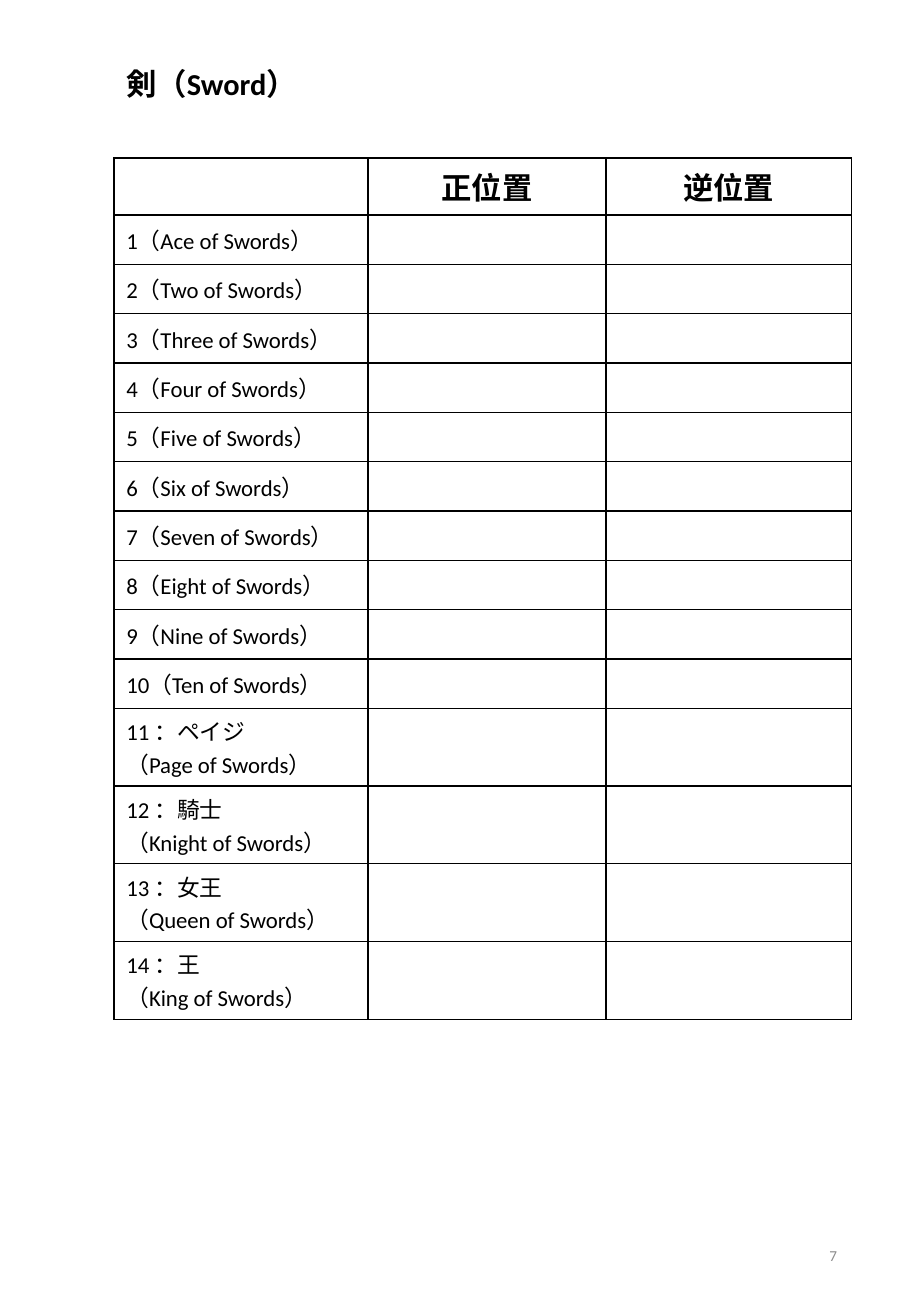
from lxml import etree
from pptx import Presentation
from pptx.dml.color import RGBColor
from pptx.enum import text
from pptx.oxml import ns
from pptx.util import Inches, Pt

COLORS = {"ink": "000000", "paper": "FFFFFF", "page_number": "8C8C8C"}
FORMATS = {
    "heading": {"size": Pt(18), "bold": True},
    "card": {"size": Pt(13.5), "bold": False},
    "page_number": {"size": Pt(9), "bold": False},
}
RANKS = ["Ace", "Two", "Three", "Four", "Five", "Six", "Seven", "Eight", "Nine", "Ten"]
COURT = [("ペイジ", "Page"), ("騎士", "Knight"), ("女王", "Queen"), ("王", "King")]


class SuitSheet:
    font_name = "Calibri"

    def __init__(self, deck):
        self.page = deck.slides.add_slide(deck.slide_layouts[6])

    def set_lines(self, frame, lines, style, align=text.PP_ALIGN.LEFT, color="ink"):
        """Fill a text frame with one paragraph per line."""
        for index, line in enumerate(lines):
            para = frame.add_paragraph() if index else frame.paragraphs[0]
            para.alignment = align
            span = para.add_run()
            span.text = line
            span.font.name = self.font_name
            span.font.color.rgb = RGBColor.from_string(COLORS[color])
            for name, value in FORMATS[style].items():
                setattr(span.font, name, value)

    def text_box(self, place, line, style, anchor=text.MSO_ANCHOR.TOP, **look):
        box = self.page.shapes.add_textbox(*map(Inches, place))
        box.text_frame.word_wrap = True
        box.text_frame.vertical_anchor = anchor
        self.set_lines(box.text_frame, [line], style, **look)

    def border(self, cell):
        """Draw a thin line on all four sides of a cell."""
        properties = cell._tc.get_or_add_tcPr()
        for index, side in enumerate(("lnL", "lnR", "lnT", "lnB")):
            line = etree.Element(ns.qn(f"a:{side}"), w=str(Pt(1)))
            fill = etree.SubElement(line, ns.qn("a:solidFill"))
            etree.SubElement(fill, ns.qn("a:srgbClr"), val=COLORS["ink"])
            properties.insert(index, line)

    def table(self, place, widths, heights, rows):
        """Build a ruled table whose first row is the heading."""
        frame = self.page.shapes.add_table(len(rows), len(widths), *map(Inches, place))
        table = frame.table
        table.first_row = table.horz_banding = False
        for column, width in zip(table.columns, widths):
            column.width = Inches(width)
        for row, height in zip(table.rows, heights):
            row.height = Inches(height)
        for row_index, row in enumerate(rows):
            style, align = (("card", text.PP_ALIGN.LEFT) if row_index
                            else ("heading", text.PP_ALIGN.CENTER))
            for column_index, lines in enumerate(row):
                cell = table.cell(row_index, column_index)
                cell.vertical_anchor = text.MSO_ANCHOR.MIDDLE
                cell.fill.solid()
                cell.fill.fore_color.rgb = RGBColor.from_string(COLORS["paper"])
                self.border(cell)
                self.set_lines(cell.text_frame, lines, style, align)


def main():
    deck = Presentation()
    deck.slide_width, deck.slide_height = Inches(7.5), Inches(10.83)
    sheet = SuitSheet(deck)

    cards = [[f"{number}（{rank} of Swords）"] for number, rank in enumerate(RANKS, 1)]
    cards += [[f"{number} ：{title}", f"（{rank} of Swords）"]
              for number, (title, rank) in enumerate(COURT, len(RANKS) + 1)]
    rows = [[[], ["正位置"], ["逆位置"]]] + [[card, [], []] for card in cards]
    rank_height = 4.06 / len(RANKS)
    heights = [0.47] + [rank_height] * len(RANKS) + [0.64] * len(COURT)

    sheet.text_box((5.3, 10.04, 1.69, 0.58), "7", "page_number", text.MSO_ANCHOR.MIDDLE,
                   align=text.PP_ALIGN.RIGHT, color="page_number")
    sheet.table((0.94, 1.3, 6.07, sum(heights)), (2.09, 1.96, 2.02), heights, rows)
    sheet.text_box((0.94, 0.49, 2.94, 0.4), "剣（Sword）", "heading")
    deck.save("out.pptx")


if __name__ == "__main__":
    main()
